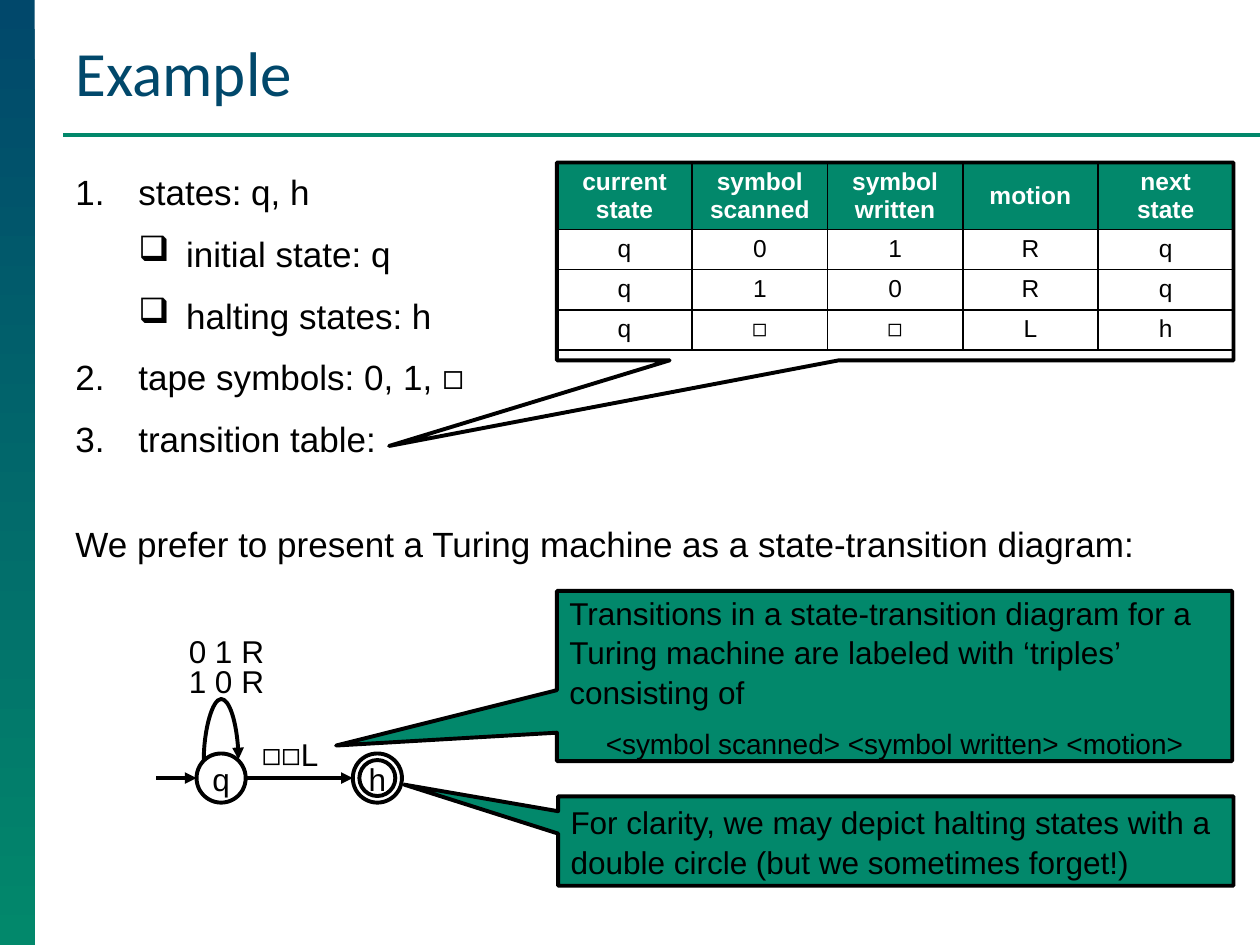
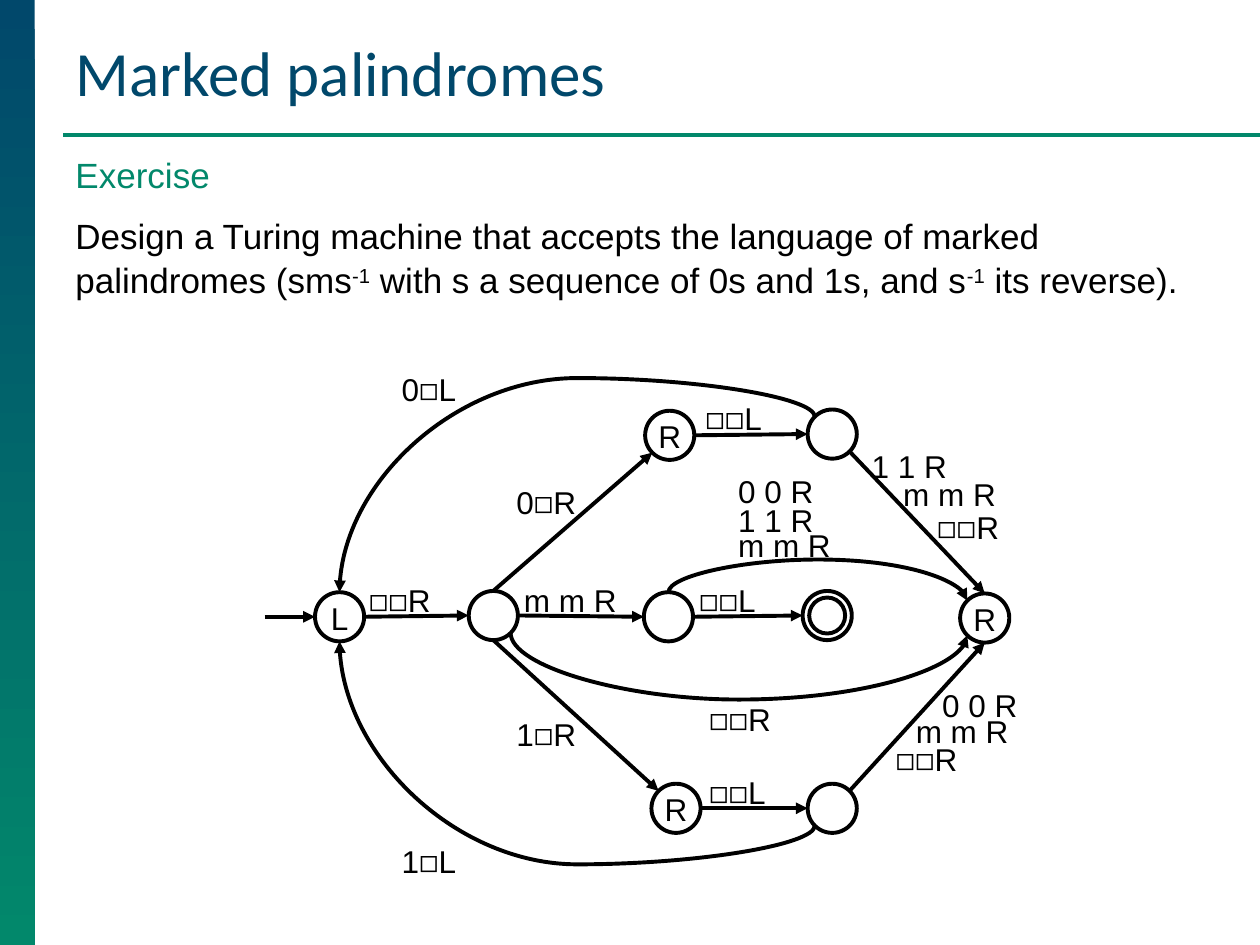
from dataclasses import dataclass
from math import sqrt

from lxml.etree import SubElement
from pptx import Presentation
from pptx.dml.color import RGBColor
from pptx.enum.shapes import MSO_CONNECTOR, MSO_SHAPE
from pptx.enum.text import MSO_ANCHOR, MSO_AUTO_SIZE, PP_ALIGN
from pptx.oxml.ns import qn
from pptx.util import Emu, Inches, Pt

# The slide is a grid of 100 columns by 75 rows; every length is in grid units.
COLUMNS, ROWS = 100, 75
UNIT = Inches(10) // COLUMNS


@dataclass(frozen=True)
class Theme:
    navy: RGBColor = RGBColor.from_string("01486B")
    green: RGBColor = RGBColor.from_string("02886B")
    black: RGBColor = RGBColor.from_string("000000")
    white: RGBColor = RGBColor.from_string("FFFFFF")
    title_font: str = "Calibri"
    body_font: str = "Arial"
    title: int = 36
    body: int = 20
    label: int = 18
    small: int = 16
    cell: int = 14
    stroke: float = 2.25


THEME = Theme()


@dataclass(frozen=True)
class Box:
    left: float
    top: float
    width: float
    height: float

    def within(self, left, top, width, height):
        return Box(self.left + left, self.top + top, width, height)

    def emu(self):
        return [grid(n) for n in (self.left, self.top, self.width, self.height)]


def grid(units):
    return Emu(round(units * UNIT))


# Text
def write(frame, text, size=THEME.body, color=THEME.black, font=THEME.body_font, bold=False,
          align=PP_ALIGN.LEFT, spacing=1.05, bullet=None, level=0, indent=0, hang=0):
    """Add one paragraph; pieces between ^ marks are superscript."""
    first = not frame.paragraphs[0].runs
    para = frame.paragraphs[0] if first else frame.add_paragraph()
    para.alignment, para.level, para.line_spacing = align, level, spacing
    para.space_before = Pt(0 if first else size / 2)
    if bullet:
        properties = para._p.get_or_add_pPr()
        properties.set("marL", str(grid(indent)))
        properties.set("indent", str(grid(-hang)))
        if bullet == "number":
            SubElement(properties, qn("a:buAutoNum"), type="arabicPeriod")
        else:
            SubElement(properties, qn("a:buChar"), char=bullet)
    for index, piece in enumerate(text.split("^")):
        span = para.add_run()
        span.text = piece
        span.font.size, span.font.name, span.font.bold = Pt(size), font, bold
        span.font.color.rgb = color
        if index % 2:
            span.font._element.set("baseline", "30000")


def add_text_box(page, box):
    frame = page.shapes.add_textbox(*box.emu()).text_frame
    frame.word_wrap = True
    return frame


# Shapes and lines
def outline(line, color=THEME.black, width=THEME.stroke):
    line.color.rgb = color
    line.width = Pt(width)


def add_outlined(page, kind, box, fill=None, adjustments=()):
    shape = page.shapes.add_shape(kind, *box.emu())
    shape.shadow.inherit = False
    outline(shape.line)
    if fill:
        shape.fill.solid()
        shape.fill.fore_color.rgb = fill
    else:
        shape.fill.background()
    for index, value in enumerate(adjustments):
        shape.adjustments[index] = value
    shape.text_frame.vertical_anchor = MSO_ANCHOR.MIDDLE
    shape.text_frame.word_wrap = True
    return shape


def add_line(page, start, end, kind=MSO_CONNECTOR.STRAIGHT, color=THEME.black, arrow=True):
    line = page.shapes.add_connector(kind, *[grid(n) for n in (*start, *end)])
    outline(line.line, color)
    properties = line._element.spPr
    if arrow:
        SubElement(properties.find(qn("a:ln")), qn("a:tailEnd"), type="triangle")
    SubElement(properties, qn("a:effectLst"))
    return line


def add_curve(page, start, end, peak):
    """Draw a curved arrow that rises or dips to the row given as peak."""
    run, rise = end[0] - start[0], (end[1] - start[1]) or -0.1
    middle_x, middle_y = start[0] + run / 2, start[1] + rise / 2
    # A quarter turn swaps the sides of the frame around its middle
    half_width, half_height = abs(rise) / 2, abs(run) / 2
    curve = add_line(page, (middle_x - half_width, middle_y - half_height),
                     (middle_x + half_width, middle_y + half_height), MSO_CONNECTOR.CURVE)
    properties = curve._element.spPr
    frame = properties.find(qn("a:xfrm"))
    frame.set("rot", str((90 if rise < 0 else 270) * 60000))
    frame.set("flipH", "1")
    if run * rise < 0:
        frame.set("flipV", "1")
    guides = properties.find(qn("a:prstGeom")).find(qn("a:avLst"))
    bend = round((peak - start[1]) / rise * 100000)
    SubElement(guides, qn("a:gd"), name="adj1", fmla=f"val {bend}")


# Frame shared by both slides
def add_page(deck, title):
    page = deck.slides.add_slide(deck.slide_layouts[5])
    band = add_outlined(page, MSO_SHAPE.RECTANGLE, Box(0, 0, 2.75, ROWS))
    band.line.fill.background()
    band.fill.gradient()
    band.fill.gradient_angle = 270
    for stop, color in zip(band.fill.gradient_stops, (THEME.navy, THEME.green)):
        stop.color.rgb = color
    add_line(page, (5, 10.7), (COLUMNS, 10.7), color=THEME.green, arrow=False)

    heading = page.shapes.title
    heading.left, heading.top, heading.width, heading.height = Box(5, 2.1, 92.8, 7.1).emu()
    frame = heading.text_frame
    frame.auto_size = MSO_AUTO_SIZE.NONE
    frame.vertical_anchor = MSO_ANCHOR.BOTTOM
    write(frame, title, size=THEME.title, color=THEME.navy, font=THEME.title_font, spacing=1.0)
    return page


# State-transition diagrams
STATE = 3.9
DIAGONAL = sqrt(0.5)
SIDES = {"n": (0, -1), "e": (1, 0), "s": (0, 1), "w": (-1, 0),
         "ne": (DIAGONAL, -DIAGONAL), "se": (DIAGONAL, DIAGONAL),
         "sw": (-DIAGONAL, DIAGONAL), "nw": (-DIAGONAL, -DIAGONAL)}


def add_machine(page, box, states, start, entry, arrows, curves, labels):
    """States hold centre and letter; arrows and curves join 'state side' rim points."""
    def rim(place):
        name, side = place.split()
        x, y, _ = states[name]
        across, down = SIDES[side]
        return box.left + x + across * STATE / 2, box.top + y + down * STATE / 2

    for name, (x, y, letter) in states.items():
        halting = name == "halt"
        circle = add_outlined(page, MSO_SHAPE.DONUT if halting else MSO_SHAPE.OVAL,
                              box.within(x - STATE / 2, y - STATE / 2, STATE, STATE),
                              adjustments=(0.134,) if halting else ())
        frame = circle.text_frame
        frame.margin_left = frame.margin_right = frame.margin_top = frame.margin_bottom = 0
        if letter:
            frame.word_wrap = False
            write(frame, letter, size=THEME.label, align=PP_ALIGN.CENTER)

    x, y = rim(f"{start} w")
    add_line(page, (x - entry, y), (x, y))
    for source, target in arrows:
        add_line(page, rim(source), rim(target))
    for source, target, peak in curves:
        add_curve(page, rim(source), rim(target), box.top + peak)
    for text, x, y in labels:
        write(add_text_box(page, box.within(x, y, 10, 4)), text, size=THEME.label)


# Transition table
def add_transitions(page, box, rows):
    table = page.shapes.add_table(len(rows), len(rows[0]), *box.emu()).table
    table.horz_banding = False
    for column in table.columns:
        column.width = grid(box.width / len(rows[0]))
    for index, texts in enumerate(rows):
        header = index == 0
        table.rows[index].height = grid(5.3 if header else 3.2)
        for cell, text in zip(table.rows[index].cells, texts):
            cell.margin_top = cell.margin_bottom = grid(0.45)
            cell.vertical_anchor = MSO_ANCHOR.MIDDLE if header else MSO_ANCHOR.TOP
            write(cell.text_frame, text, size=THEME.cell, bold=header, spacing=1.0,
                  color=THEME.white if header else THEME.black, align=PP_ALIGN.CENTER)
            for side in ("a:lnL", "a:lnR", "a:lnT", "a:lnB"):
                border = SubElement(cell._tc.get_or_add_tcPr(), qn(side), w=str(Pt(1)))
                SubElement(SubElement(border, qn("a:solidFill")), qn("a:srgbClr"),
                           val=str(THEME.black))
            if header:
                cell.fill.solid()
                cell.fill.fore_color.rgb = THEME.green
            else:
                cell.fill.background()


def add_callout(page, box, pointer, fill=None):
    return add_outlined(page, MSO_SHAPE.RECTANGULAR_CALLOUT, box, fill, pointer).text_frame


# Slide 1
def build_example(deck):
    page = add_page(deck, "Example")

    # Definition and its transition table
    table_box = Box(44.2, 12.9, 53.7, 15.7)
    add_transitions(page, table_box, [
        ("current state", "symbol scanned", "symbol written", "motion", "next state"),
        ("q", "0", "1", "R", "q"),
        ("q", "1", "0", "R", "q"),
        ("q", "◻", "◻", "L", "h")])
    definition = add_text_box(page, Box(5, 12.9, 33.7, 24.6))
    number = dict(bullet="number", indent=5, hang=5)
    square = dict(bullet="❑", level=1, indent=8.8, hang=3.8)
    for text, style in (("states: q, h", number), ("initial state: q", square),
                        ("halting states: h", square), ("tape symbols: 0, 1, ◻", number),
                        ("transition table:", number)):
        write(definition, text, **style)
    add_callout(page, table_box, (-0.748, 0.933))

    # Diagram
    write(add_text_box(page, Box(5, 40.8, 87.5, 4.4)),
          "We prefer to present a Turing machine as a state-transition diagram:")
    add_machine(page, Box(12, 49, 20, 15),
                states={"q": (5.55, 12.75, "q"), "halt": (17.95, 12.75, "h")},
                start="q", entry=3.2,
                arrows=[("q e", "halt w")],
                curves=[("q nw", "q ne", 6.4)],
                labels=[("0 1 R", 2, 0.5), ("1 0 R", 2, 2.9), ("◻◻L", 7.8, 8.7)])

    # Remarks
    triples = add_callout(page, Box(44.2, 46.9, 53.6, 13.5), (-0.827, 0.409), THEME.green)
    write(triples, "Transitions in a state-transition diagram for a Turing machine are labeled "
                   "with ‘triples’ consisting of", size=THEME.label)
    write(triples, "<symbol scanned> <symbol written> <motion>", size=THEME.small,
          align=PP_ALIGN.CENTER)
    halting = add_callout(page, Box(44.3, 63.2, 53.6, 7.1), (-0.728, -0.631), THEME.green)
    write(halting, "For clarity, we may depict halting states with a double circle "
                   "(but we sometimes forget!)", size=THEME.label)


# Slide 2
def build_palindromes(deck):
    page = add_page(deck, "Marked palindromes")
    exercise = add_text_box(page, Box(5, 11.5, 92.8, 12.8))
    write(exercise, "Exercise", color=THEME.green)
    write(exercise, "Design a Turing machine that accepts the language of marked palindromes "
                    "(sms^-1^ with s a sequence of 0s and 1s, and s^-1^ its reverse).")

    add_machine(
        page, Box(20, 28, 62, 43),
        states={"left": (6.95, 20.95, "L"), "read": (19.15, 20.85, ""),
                "zero": (33.15, 6.55, "R"), "marker": (33.05, 20.95, ""),
                "one": (33.65, 36.15, "R"), "halt": (45.65, 20.85, ""),
                "match0": (46.05, 6.45, ""), "match1": (46.05, 36.15, ""),
                "reject": (58.15, 21.05, "R")},
        start="left", entry=4,
        arrows=[("left e", "read w"), ("read n", "zero sw"), ("read e", "marker w"),
                ("read s", "one nw"), ("marker e", "halt w"), ("zero e", "match0 w"),
                ("one e", "match1 w"), ("match0 se", "reject n"), ("match1 ne", "reject s")],
        curves=[("match0 nw", "left n", 2), ("match1 sw", "left s", 40.6),
                ("marker n", "reject nw", 16.4), ("read se", "reject sw", 27.5)],
        labels=[("0◻L", 10.9, 0.7), ("1◻L", 10.9, 38.2), ("0◻R", 20, 9.7), ("1◻R", 20, 28.1),
                ("◻◻R", 8.3, 17.5), ("m m R", 20.6, 17.5), ("◻◻L", 34.5, 17.5),
                ("◻◻L", 35, 3), ("◻◻L", 35.3, 32.7), ("◻◻R", 35.3, 26.9),
                ("0 0 R", 37.6, 8.8), ("1 1 R", 37.6, 11.1), ("m m R", 37.6, 13.1),
                ("1 1 R", 48.2, 6.8), ("m m R", 50.7, 9.1), ("◻◻R", 53.4, 11.7),
                ("0 0 R", 53.8, 25.8), ("m m R", 51.7, 27.9), ("◻◻R", 50.1, 30.1)])


def main():
    deck = Presentation()
    deck.slide_width, deck.slide_height = grid(COLUMNS), grid(ROWS)
    build_example(deck)
    build_palindromes(deck)
    deck.save("out.pptx")


if __name__ == "__main__":
    main()
